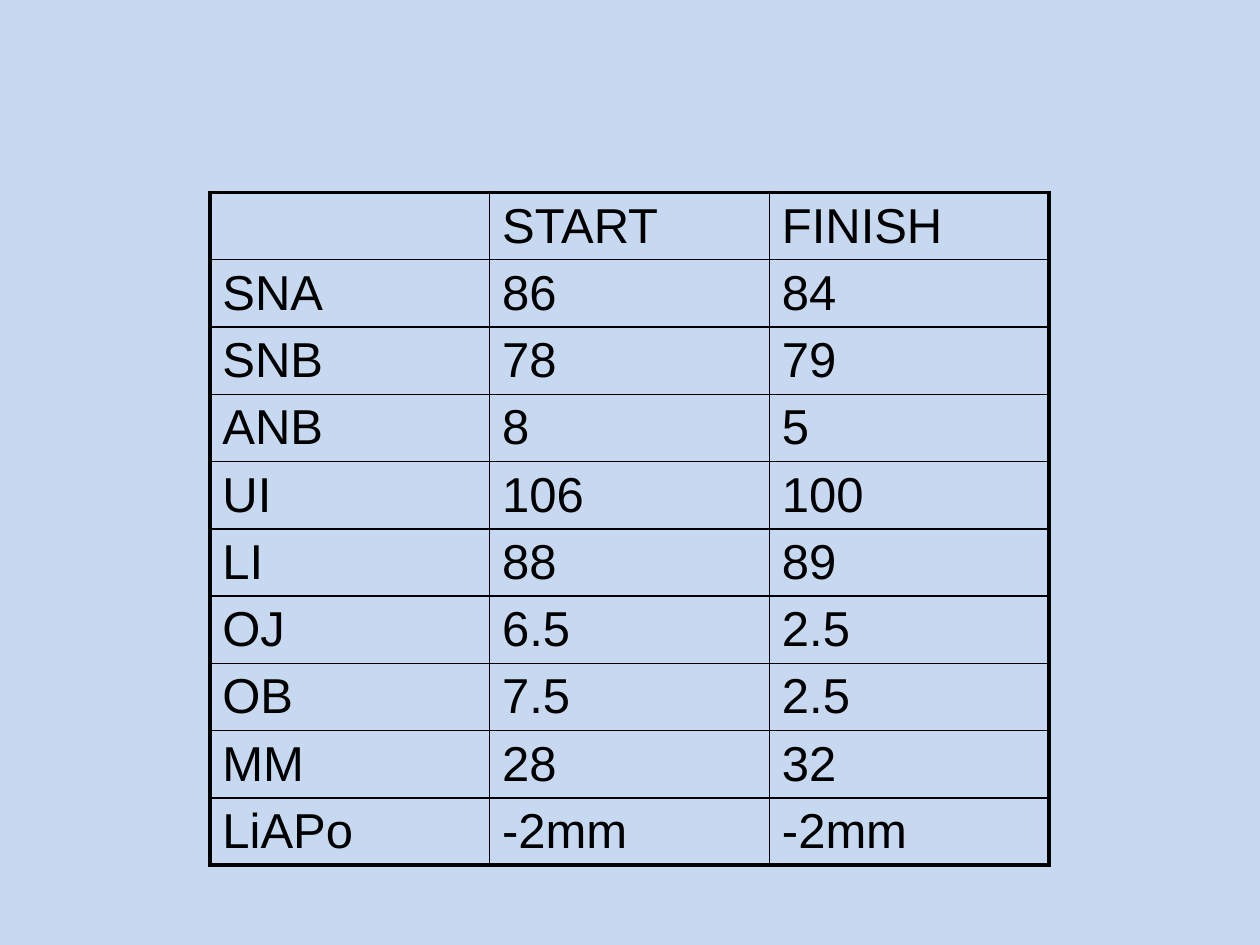
import lxml.etree
import pptx
import pptx.dml.color
import pptx.enum.text
import pptx.oxml.ns
import pptx.util

COLOURS = {"background": "C6D9F1", "ink": "000000"}
FONT = "Arial"
TEXT_SIZE = 28
OUTER_LINE = 2.25
INNER_LINE = 1

MEASUREMENTS = [
    ("", "START", "FINISH"),
    ("SNA", "86", "84"),
    ("SNB", "78", "79"),
    ("ANB", "8", "5"),
    ("UI", "106", "100"),
    ("LI", "88", "89"),
    ("OJ", "6.5", "2.5"),
    ("OB", "7.5", "2.5"),
    ("MM", "28", "32"),
    ("LiAPo", "-2mm", "-2mm"),
]


def colour(name):
    return pptx.dml.color.RGBColor.from_string(COLOURS[name])


class SlideBuilder:
    def __init__(self, slide):
        self.slide = slide

    def background(self):
        fill = self.slide.background.fill
        fill.solid()
        fill.fore_color.rgb = colour("background")

    def border(self, cell, side, width):
        properties = cell._tc.get_or_add_tcPr()
        qualified = pptx.oxml.ns.qn
        line = lxml.etree.SubElement(properties, qualified(f"a:ln{side}"))
        line.set("w", str(int(pptx.util.Pt(width))))
        fill = lxml.etree.SubElement(line, qualified("a:solidFill"))
        lxml.etree.SubElement(fill, qualified("a:srgbClr")).set("val", COLOURS["ink"])

    def cell(self, cell, text, edges):
        for side, is_outer in edges.items():
            self.border(cell, side, OUTER_LINE if is_outer else INNER_LINE)
        cell.fill.background()
        cell.vertical_anchor = pptx.enum.text.MSO_ANCHOR.TOP
        cell.text_frame.text = text
        for span in cell.text_frame.paragraphs[0].runs:
            span.font.name = FONT
            span.font.size = pptx.util.Pt(TEXT_SIZE)
            span.font.bold = False
            span.font.color.rgb = colour("ink")

    def table(self, rows, left, top, column_width, row_height):
        row_count, column_count = len(rows), len(rows[0])
        table = self.slide.shapes.add_table(
            row_count, column_count, left, top,
            column_width * column_count, row_height * row_count,
        ).table
        table.first_row = False
        table.horz_banding = False
        for row, texts in enumerate(rows):
            for column, text in enumerate(texts):
                edges = {
                    "L": column == 0,
                    "R": column == column_count - 1,
                    "T": row == 0,
                    "B": row == row_count - 1,
                }
                self.cell(table.cell(row, column), text, edges)


def main():
    deck = pptx.Presentation()
    deck.slide_width = pptx.util.Cm(25.4)
    deck.slide_height = pptx.util.Cm(19.05)
    blank_layout = deck.slide_layouts[6]
    builder = SlideBuilder(deck.slides.add_slide(blank_layout))
    builder.background()
    builder.table(
        MEASUREMENTS,
        left=pptx.util.Cm(4.23),
        top=pptx.util.Cm(3.88),
        column_width=pptx.util.Cm(5.64),
        row_height=pptx.util.Cm(1.35),
    )
    deck.save("out.pptx")


if __name__ == "__main__":
    main()
